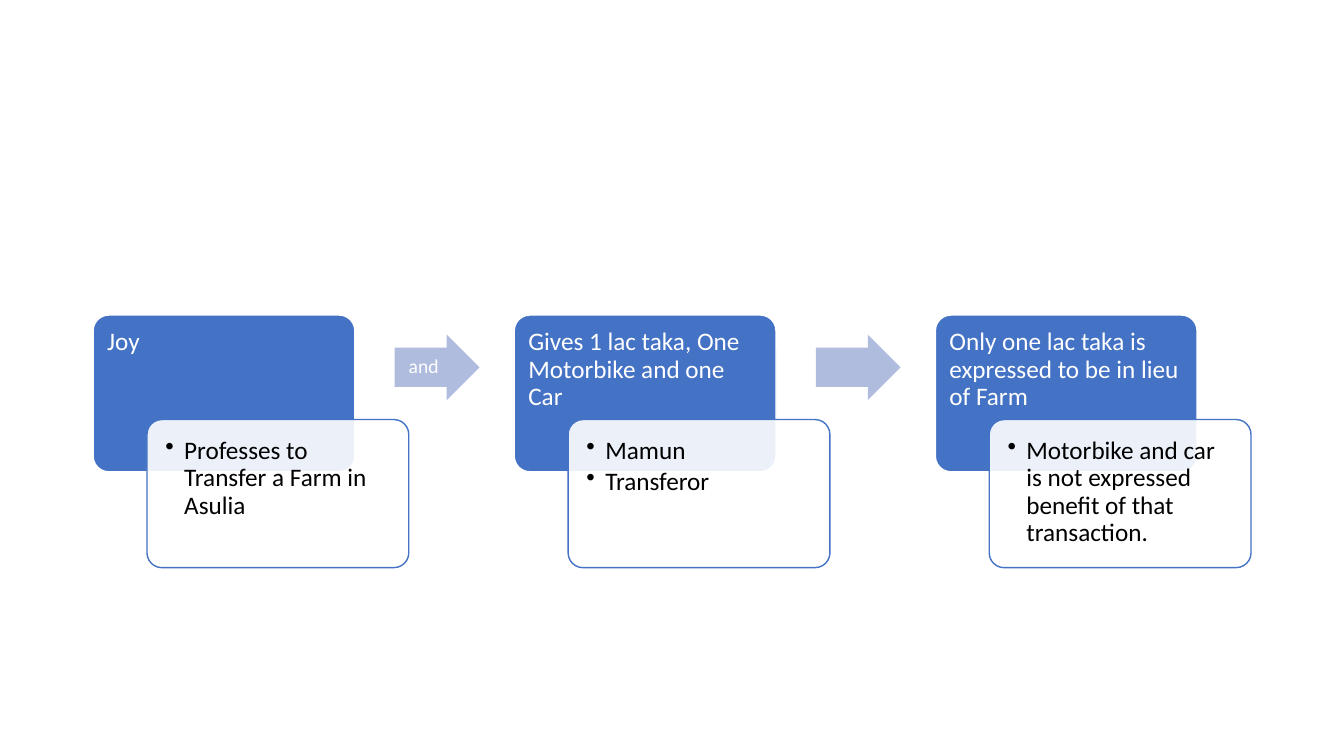
"""Builds a slide with a three-step process of headed cards joined by arrows."""
from dataclasses import dataclass

from lxml import etree
from pptx import Presentation
from pptx.dml.color import RGBColor
from pptx.enum.shapes import MSO_SHAPE
from pptx.enum.text import MSO_ANCHOR, PP_ALIGN
from pptx.oxml.ns import qn
from pptx.util import Pt

ROUNDED = MSO_SHAPE.ROUNDED_RECTANGLE
ARROW = MSO_SHAPE.RIGHT_ARROW
TOP, MIDDLE = MSO_ANCHOR.TOP, MSO_ANCHOR.MIDDLE
LEFT, CENTER = PP_ALIGN.LEFT, PP_ALIGN.CENTER
BLANK_LAYOUT = 6


@dataclass(frozen=True)
class Theme:
    font: str = "Calibri"
    blue: str = "4472C4"
    pale_blue: str = "B0BCDE"
    white: str = "FFFFFF"
    black: str = "000000"
    step_size: float = 18
    link_size: float = 14
    line_width: float = 1
    bullet_indent: float = 13.5
    bullet_gap: float = 2.7
    line_spacing: float = 0.9
    detail_opacity: int = 90


class ProcessSlide:
    """Draws process elements on one slide in one style."""

    def __init__(self, slide, theme):
        self.slide = slide
        self.theme = theme

    def outline(self, preset, box, adjustments, fill, line=None):
        shape = self.slide.shapes.add_shape(preset, *map(Pt, box))
        shape.shadow.inherit = False
        for index, value in enumerate(adjustments):
            shape.adjustments[index] = value
        shape.fill.solid()
        shape.fill.fore_color.rgb = RGBColor.from_string(fill)
        if line:
            shape.line.color.rgb = RGBColor.from_string(line)
            shape.line.width = Pt(self.theme.line_width)
        else:
            shape.line.fill.background()
        return shape

    def add_text(self, shape, lines, size, color, insets, anchor=TOP, align=LEFT, bullets=False):
        frame = shape.text_frame
        sides = ("margin_left", "margin_top", "margin_right", "margin_bottom")
        frame_format = dict(zip(sides, map(Pt, insets)), word_wrap=True, vertical_anchor=anchor)
        for key, value in frame_format.items():
            setattr(frame, key, value)
        for index, line in enumerate(lines):
            paragraph = frame.add_paragraph() if index else frame.paragraphs[0]
            if bullets:
                self.bullet(paragraph)
            paragraph_format = {"alignment": align, "line_spacing": self.theme.line_spacing}
            for key, value in paragraph_format.items():
                setattr(paragraph, key, value)
            run = paragraph.add_run()
            run.text = line
            for key, value in {"name": self.theme.font, "size": Pt(size)}.items():
                setattr(run.font, key, value)
            run.font.color.rgb = RGBColor.from_string(color)

    def bullet(self, paragraph):
        properties = paragraph._p.get_or_add_pPr()
        indent = Pt(self.theme.bullet_indent)
        properties.set("marL", str(indent))
        properties.set("indent", str(-indent))
        etree.SubElement(properties, qn("a:buChar"), char="•")
        paragraph.level = 1
        paragraph.space_after = Pt(self.theme.bullet_gap)

    def heading(self, box, text):
        theme = self.theme
        shape = self.outline(ROUNDED, box, [0.1], theme.blue, theme.white)
        self.add_text(shape, [text], theme.step_size, theme.white, (6.8, 6.8, 6.8, 5))

    def details(self, box, lines):
        theme = self.theme
        shape = self.outline(ROUNDED, box, [0.1], theme.white, theme.blue)
        color = shape._element.spPr.find(qn("a:solidFill"))[0]
        etree.SubElement(color, qn("a:alpha"), val=str(theme.detail_opacity * 1000))
        self.add_text(shape, lines, theme.step_size, theme.black, (10,) * 4, bullets=True)

    def link(self, box, text):
        theme = self.theme
        shape = self.outline(ARROW, box, [0.6, 0.5], theme.pale_blue)
        if text:
            self.add_text(shape, [text], theme.link_size, theme.white, (0, 0, 5, 0), MIDDLE, CENTER)


def main():
    presentation = Presentation()
    presentation.slide_width, presentation.slide_height = Pt(960), Pt(540)
    slide = presentation.slides.add_slide(presentation.slide_layouts[BLANK_LAYOUT])
    process = ProcessSlide(slide, Theme())

    steps = [
        ("Joy", ["Professes to Transfer a Farm in Asulia"], "and"),
        ("Gives 1 lac taka, One Motorbike and one Car", ["Mamun", "Transferor"], ""),
        ("Only one lac taka is expressed to be in lieu of Farm",
         ["Motorbike and car is not expressed benefit of that transaction."], None),
    ]
    first_left, top, pitch, card_width = 66.5, 225, 300.8, 187
    for index, (heading, details, link) in enumerate(steps):
        left = first_left + index * pitch
        process.heading((left, top, card_width, 112), heading)
        process.details((left + 38.5, top + 74.7, card_width, 105.8), details)
        if link is not None:
            process.link((left + 215.5, top + 14, 60.5, 46.8), link)

    presentation.save("out.pptx")


if __name__ == "__main__":
    main()
